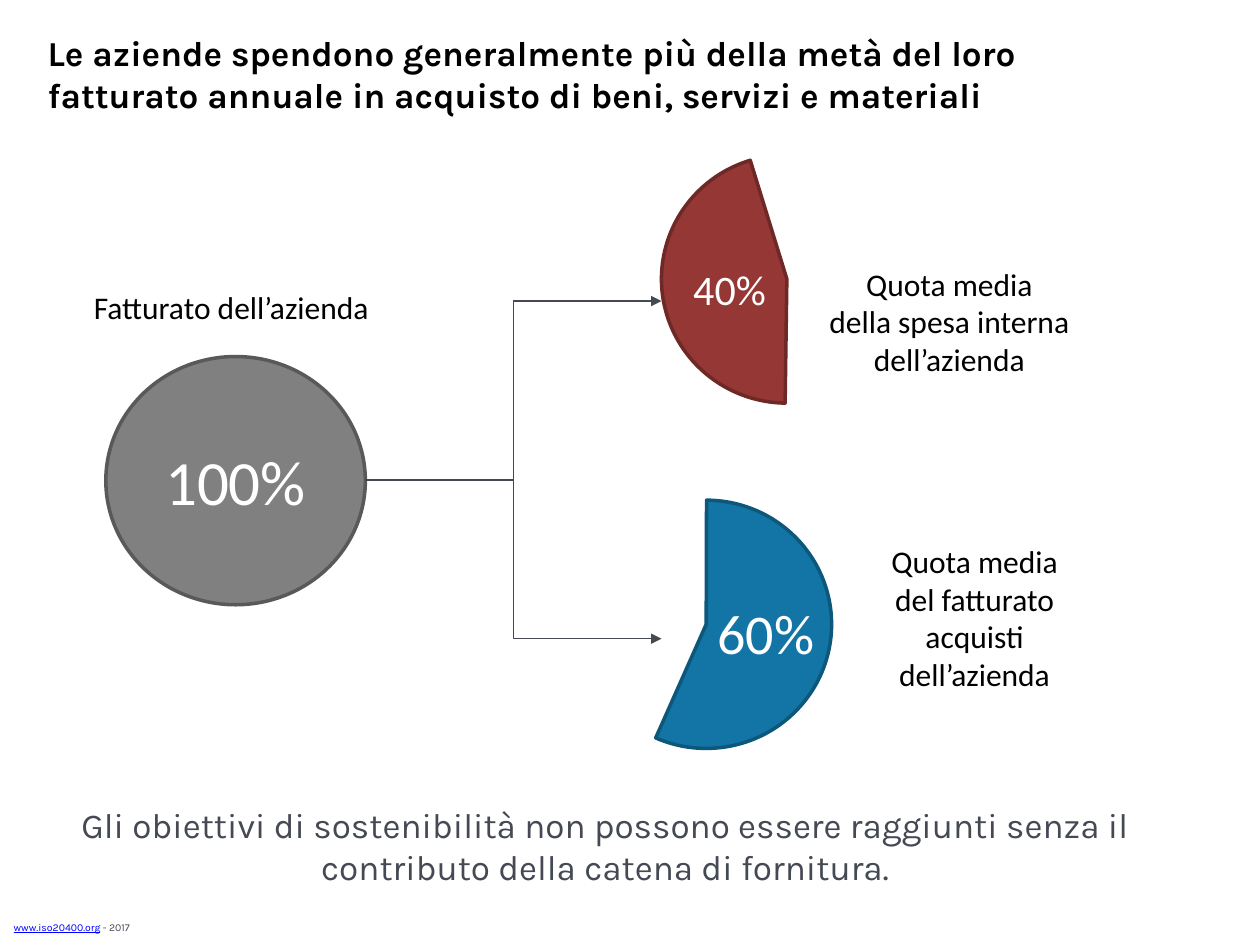
from pptx import Presentation
from pptx.dml.color import RGBColor
from pptx.enum.shapes import MSO_CONNECTOR, MSO_SHAPE
from pptx.enum.text import MSO_ANCHOR, PP_ALIGN
from pptx.oxml.ns import qn
from pptx.util import Inches, Pt
from lxml.etree import SubElement

BLACK = RGBColor(0x00, 0x00, 0x00)
WHITE = RGBColor(0xFF, 0xFF, 0xFF)
SLATE = RGBColor(0x44, 0x49, 0x53)
LINK = RGBColor(0x00, 0x00, 0xFF)
GREY = RGBColor(0x80, 0x80, 0x80)
GREY_EDGE = RGBColor(0x59, 0x59, 0x59)
RED = RGBColor(0x95, 0x37, 0x34)
RED_EDGE = RGBColor(0x6E, 0x29, 0x26)
BLUE = RGBColor(0x12, 0x75, 0xA5)
BLUE_EDGE = RGBColor(0x0D, 0x57, 0x7A)

deck = Presentation()
deck.slide_width, deck.slide_height = Inches(10), Inches(7.5)
slide = deck.slides.add_slide(deck.slide_layouts[6])
shapes = slide.shapes


def write(text, box, size, font="Calibri", color=BLACK, bold=None,
          align=PP_ALIGN.CENTER, anchor=MSO_ANCHOR.TOP, wrap=True):
    frame = shapes.add_textbox(*map(Inches, box)).text_frame
    frame.word_wrap = wrap
    frame.vertical_anchor = anchor
    frame.text = text
    for para in frame.paragraphs:
        para.alignment = align
        for run in para.runs:
            run.font.size = Pt(size)
            run.font.name = font
            run.font.color.rgb = color
            run.font.bold = bold
    return frame


def draw(kind, box, fill, edge):
    shape = shapes.add_shape(kind, *map(Inches, box))
    shape.shadow.inherit = False
    shape.fill.solid()
    shape.fill.fore_color.rgb = fill
    shape.line.color.rgb = edge
    shape.line.width = Pt(2)
    return shape


foot = write("www.iso20400.org", (0.01, 7.26, 6.47, 0.2), 6, font="Karla",
             color=LINK, align=PP_ALIGN.LEFT)
foot.paragraphs[0].runs[0].font.underline = True
year = foot.paragraphs[0].add_run()
year.text = " - 2017"
year.font.size = Pt(6)
year.font.name = "Karla"
year.font.color.rgb = SLATE

write("Le aziende spendono generalmente più della metà del loro fatturato "
      "annuale in acquisto di beni, servizi e materiali",
      (0.28, 0.36, 8.11, 0.44), 20, font="Karla", bold=True,
      align=PP_ALIGN.LEFT, anchor=MSO_ANCHOR.MIDDLE)
write("Gli obiettivi di sostenibilità non possono essere raggiunti senza il "
      "contributo della catena di fornitura.",
      (0.2, 6.33, 9.21, 0.77), 20, font="Karla", color=SLATE)

whole = (0.84, 2.83, 2.06, 1.97)
draw(MSO_SHAPE.OVAL, whole, GREY, GREY_EDGE)
write("100%", whole, 36, color=WHITE, anchor=MSO_ANCHOR.MIDDLE)
write("Fatturato dell’azienda", (0.54, 2.24, 2.59, 0.4), 18)

for left, top, start, end, fill, edge in [
    (5.25, 1.23, 54.48, 151.72, RED, RED_EDGE),
    (4.61, 3.97, 162.09, 68.39, BLUE, BLUE_EDGE),
]:
    pie = draw(MSO_SHAPE.PIE, (left, top, 1.99, 1.97), fill, edge)
    pie.adjustments[0] = start
    pie.adjustments[1] = end

write("Quota media\ndella spesa interna dell’azienda",
      (6.08, 2.05, 2.91, 1.01), 18)
write("40%", (5.4, 2.04, 0.78, 0.5), 24, color=WHITE, wrap=False)
write("Quota media\ndel fatturato acquisti\ndell’azienda",
      (6.6, 4.25, 2.27, 1.31), 18)
write("60%", (5.59, 4.7, 0.98, 0.64), 32, color=WHITE, wrap=False)

for goal in (2.39, 5.07):
    arrow = shapes.add_connector(MSO_CONNECTOR.ELBOW, Inches(2.9), Inches(3.81),
                                 Inches(5.25), Inches(goal))
    arrow.line.color.rgb = SLATE
    arrow.line.width = Pt(0.75)
    props = arrow.line._get_or_add_ln()
    SubElement(props, qn("a:tailEnd"), type="triangle")
    SubElement(props.getparent(), qn("a:effectLst"))

deck.save("out.pptx")
